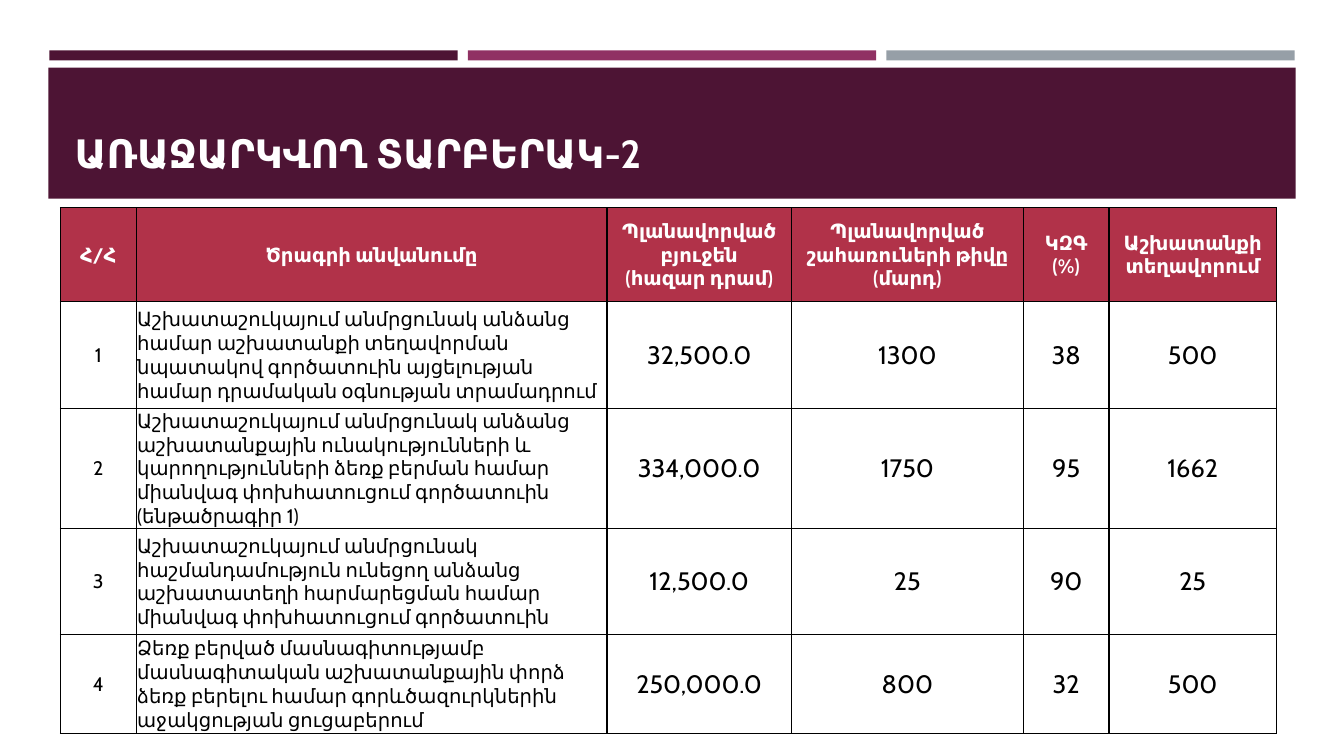
from lxml import etree
from pptx import Presentation
from pptx.dml.color import RGBColor
from pptx.enum.shapes import MSO_SHAPE
from pptx.enum.text import MSO_ANCHOR, PP_ALIGN
from pptx.oxml.ns import qn
from pptx.util import Inches, Pt

RECTANGLE = MSO_SHAPE.RECTANGLE
LEFT, CENTER = PP_ALIGN.LEFT, PP_ALIGN.CENTER
MIDDLE, BOTTOM = MSO_ANCHOR.MIDDLE, MSO_ANCHOR.BOTTOM

PLUM = RGBColor(0x4D, 0x14, 0x34)
MAGENTA = RGBColor(0x90, 0x31, 0x63)
GRAY = RGBColor(0x96, 0x9F, 0xA7)
CRIMSON = RGBColor(0xB1, 0x32, 0x49)
WHITE = RGBColor(0xFF, 0xFF, 0xFF)
BLACK = RGBColor(0, 0, 0)
FONT = "Cabin"


def set_text(frame, text, size, color, bold, align):
    frame.text = text
    para = frame.paragraphs[0]
    para.alignment = align
    para.font.color.rgb = color
    formats = {"name": FONT, "size": Pt(size), "bold": bold}
    for span in para.runs:
        span.font.color.rgb = color
        for name, value in formats.items():
            setattr(span.font, name, value)


def add_borders(cell):
    props = cell._tc.get_or_add_tcPr()
    for index, side in enumerate(("lnL", "lnR", "lnT", "lnB")):
        line = etree.Element(qn(f"a:{side}"), w=str(Pt(1)))
        fill = etree.SubElement(line, qn("a:solidFill"))
        etree.SubElement(fill, qn("a:srgbClr"), val=str(BLACK))
        props.insert(index, line)


deck = Presentation()
deck.slide_width, deck.slide_height = Inches(13.33), Inches(7.5)
page = deck.slides.add_slide(deck.slide_layouts[5])

# Three accent bars above the title band
bands = [(0.49 + 4.15 * i, 0.5, 4.05, 0.1, color)
         for i, color in enumerate((PLUM, MAGENTA, GRAY))]
bands.append((0.48, 0.67, 12.37, 1.3, PLUM))
for left, top, width, height, color in bands:
    band = page.shapes.add_shape(
        RECTANGLE, Inches(left), Inches(top), Inches(width), Inches(height))
    band.shadow.inherit = False
    band.fill.solid()
    band.fill.fore_color.rgb = color
    band.line.fill.background()

# Title, brought in front of its band
title = page.shapes.title
title.left, title.top = Inches(0.64), Inches(0.77)
title.width, title.height = Inches(12.06), Inches(1.03)
title.text_frame.vertical_anchor = BOTTOM
set_text(title.text_frame, "ԱՌԱՋԱՐԿՎՈՂ ՏԱՐԲԵՐԱԿ-2", 28, WHITE, True, LEFT)
page.shapes.element.append(title.element)

# Programme table
rows = [
    ("Հ/Հ", "Ծրագրի անվանումը", "Պլանավորված\vբյուջեն\v(հազար դրամ)",
     "Պլանավորված\vշահառուների թիվը\v(մարդ)", "ԿԶԳ\v(%)",
     "Աշխատանքի տեղավորում"),
    ("1", "Աշխատաշուկայում անմրցունակ անձանց համար աշխատանքի տեղավորման "
     "նպատակով գործատուին այցելության համար դրամական օգնության տրամադրում",
     "32,500.0", "1300", "38", "500"),
    ("2", "Աշխատաշուկայում անմրցունակ անձանց աշխատանքային ունակությունների և "
     "կարողությունների ձեռք բերման համար միանվագ փոխհատուցում գործատուին "
     "(ենթածրագիր 1)",
     "334,000.0", "1750", "95", "1662"),
    ("3", "Աշխատաշուկայում անմրցունակ հաշմանդամություն ունեցող անձանց "
     "աշխատատեղի հարմարեցման համար միանվագ փոխհատուցում գործատուին",
     "12,500.0", "25", "90", "25"),
    ("4", "Ձեռք բերված մասնագիտությամբ մասնագիտական աշխատանքային փորձ "
     "ձեռք բերելու համար գորևծազուրկներին աջակցության ցուցաբերում",
     "250,000.0", "800", "32", "500"),
]
column_widths = [0.75, 4.67, 1.83, 2.3, 0.85, 1.66]
row_heights = [0.93, 1.06, 1.14, 1.05, 0.98]
table = page.shapes.add_table(
    len(rows), len(column_widths), Inches(0.6), Inches(2.06),
    Inches(12.06), Inches(5.16)).table
for column, width in zip(table.columns, column_widths):
    column.width = Inches(width)
for row, height in zip(table.rows, row_heights):
    row.height = Inches(height)

cell_format = {
    "margin_left": Inches(0.01), "margin_right": Inches(0.01),
    "margin_top": Inches(0.01), "margin_bottom": 0,
    "vertical_anchor": MIDDLE,
}
for r, texts in enumerate(rows):
    for c, text in enumerate(texts):
        cell = table.cell(r, c)
        header = r == 0
        for name, value in cell_format.items():
            setattr(cell, name, value)
        cell.fill.solid()
        cell.fill.fore_color.rgb = CRIMSON if header else WHITE
        add_borders(cell)
        set_text(cell.text_frame, text,
                 size=14 if header or c < 2 else 18,
                 color=WHITE if header else BLACK,
                 bold=header,
                 align=LEFT if c == 1 and not header else CENTER)

deck.save("out.pptx")
